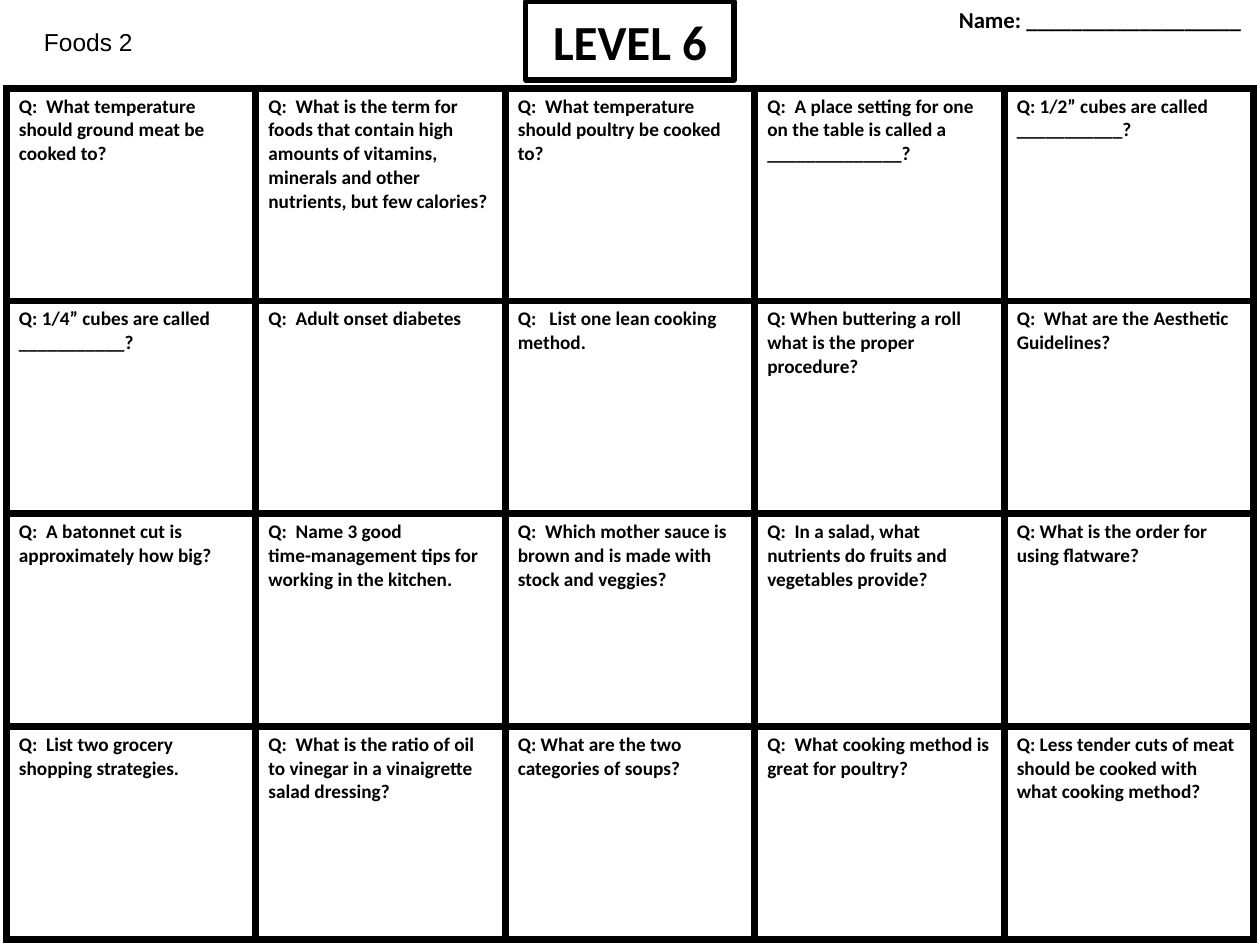
from pptx import Presentation
from pptx.dml.color import RGBColor as Rgb
from pptx.enum.shapes import MSO_SHAPE as Shape
from pptx.enum.text import MSO_ANCHOR as Anchor, PP_ALIGN as Align
from pptx.oxml import parse_xml
from pptx.oxml.ns import nsdecls
from pptx.util import Pt

COLORS = {"ink": "000000", "paper": "FFFFFF"}

# "\n" starts a paragraph, "\v" breaks a line
QUESTIONS = [
    ["Q:  What temperature should ground meat be cooked to?",
     "Q:  What is the term for foods that contain high amounts of vitamins, "
     "minerals and other nutrients, but few calories?",
     "Q:  What temperature should poultry be cooked to?",
     "Q:  A place setting for one on the table is called a ______________?",
     "Q: 1/2” cubes are called ___________?"],
    ["Q: 1/4” cubes are called\n___________?",
     "Q:  Adult onset diabetes",
     "Q:   List one lean cooking method.",
     "Q: When buttering a roll what is the proper procedure?",
     "Q:  What are the Aesthetic Guidelines?"],
    ["Q:  A batonnet cut is approximately how big?",
     "Q:  Name 3 good\vtime-management tips for working in the kitchen.",
     "Q:  Which mother sauce is brown and is made with stock and veggies?",
     "Q:  In a salad, what nutrients do fruits and vegetables provide?",
     "Q: What is the order for using flatware?"],
    ["Q:  List two grocery shopping strategies.",
     "Q:  What is the ratio of oil to vinegar in a vinaigrette salad dressing?",
     "Q: What are the two categories of soups?",
     "Q:  What cooking method is great for poultry?",
     "Q: Less tender cuts of meat should be cooked with what cooking method?"],
]


class Worksheet:
    font = "Calibri"

    def __init__(self, page):
        self.page = page

    def add_text(self, frame, text, size, font=None, bold=True, align=Align.LEFT):
        frame.word_wrap = True
        for number, line in enumerate(text.split("\n")):
            para = frame.add_paragraph() if number else frame.paragraphs[0]
            para.alignment = align
            for index, part in enumerate(line.split("\v")):
                if index:
                    para.add_line_break()
                span = para.add_run()
                span.text = part
                span.font.name = font or self.font
                span.font.size = Pt(size)
                span.font.bold = bold
                span.font.color.rgb = Rgb.from_string(COLORS["ink"])

    def label(self, bounds, text, size, **style):
        box = self.page.shapes.add_textbox(*map(Pt, bounds))
        self.add_text(box.text_frame, text, size, **style)

    def framed_title(self, bounds, text, size, line_width):
        box = self.page.shapes.add_shape(Shape.RECTANGLE, *map(Pt, bounds))
        box.shadow.inherit = False
        box.fill.background()
        box.line.color.rgb = Rgb.from_string(COLORS["ink"])
        box.line.width = Pt(line_width)
        box.text_frame.vertical_anchor = Anchor.MIDDLE
        self.add_text(box.text_frame, text, size, align=Align.CENTER)

    def border(self, cell, width):
        properties = cell._tc.get_or_add_tcPr()
        for position, side in enumerate(("lnL", "lnR", "lnT", "lnB")):
            properties.insert(position, parse_xml(
                f'<a:{side} {nsdecls("a")} w="{Pt(width)}"><a:solidFill>'
                f'<a:srgbClr val="{COLORS["ink"]}"/></a:solidFill></a:{side}>'))

    def grid(self, left, top, column_width, row_height, rows, size, line_width):
        row_count, column_count = len(rows), len(rows[0])
        table = self.page.shapes.add_table(
            row_count, column_count, Pt(left), Pt(top),
            Pt(column_width * column_count), Pt(row_height * row_count)).table
        table.first_row = table.horz_banding = False
        for column in table.columns:
            column.width = Pt(column_width)
        for row, texts in zip(table.rows, rows):
            row.height = Pt(row_height)
            for cell, text in zip(row.cells, texts):
                cell.fill.solid()
                cell.fill.fore_color.rgb = Rgb.from_string(COLORS["paper"])
                self.border(cell, line_width)
                self.add_text(cell.text_frame, text, size)


def main():
    deck = Presentation()
    deck.slide_width, deck.slide_height = Pt(720), Pt(540)
    sheet = Worksheet(deck.slides.add_slide(deck.slide_layouts[6]))

    # Header: course, level and name line
    sheet.label((18, 12, 120, 24.5), "Foods 2", 14, font="Arial", bold=False)
    sheet.framed_title((300.5, 0.75, 119, 45), "LEVEL 6", 28, 3)
    sheet.label((537, 0, 183, 26), "Name: ___________________", 13,
                align=Align.CENTER)

    # Question grid
    sheet.grid(3.6, 50.4, 142.56, 121.6, QUESTIONS, 11, 4.5)

    deck.save("out.pptx")


if __name__ == "__main__":
    main()
